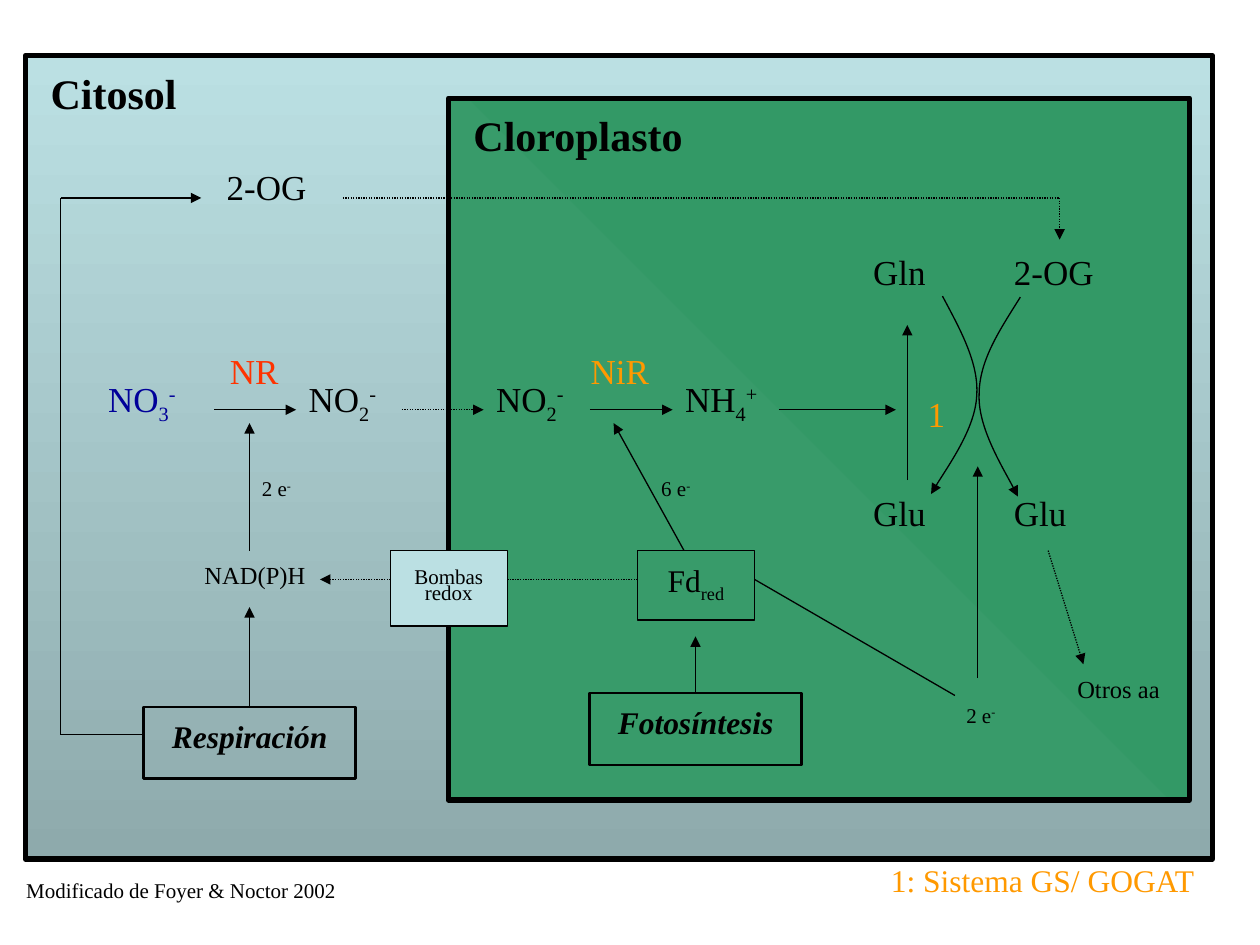
from lxml import etree
from pptx import Presentation
from pptx import util as u
from pptx.dml import color
from pptx.enum import dml, shapes, text
from pptx.oxml import ns

BLACK, ORANGE = "000000", "FF9900"
LEFT, CENTER = text.PP_ALIGN.LEFT, text.PP_ALIGN.CENTER
BASELINES = {"sub": "-25000", "sup": "30000"}


def rgb(value):
    return color.RGBColor.from_string(value)


def write(frame, paragraphs, size, align=LEFT, ink=BLACK, strong=False):
    """Fill a frame; each paragraph is a list of (text, position) runs."""
    frame.word_wrap = True
    frame.vertical_anchor = text.MSO_ANCHOR.TOP
    frame.margin_top = u.Cm(0.13 + 0.0045 * size)
    font_format = {"name": "Times New Roman", "size": u.Pt(size),
                   "bold": strong, "italic": False}
    for number, runs in enumerate(paragraphs):
        paragraph = frame.paragraphs[0] if number == 0 else frame.add_paragraph()
        paragraph.alignment = align
        for words, position in runs:
            run = paragraph.add_run()
            run.text = words
            for key, value in font_format.items():
                setattr(run.font, key, value)
            run.font.color.rgb = rgb(ink)
            if position:
                run.font._element.set("baseline", BASELINES[position])


deck = Presentation()
deck.slide_width, deck.slide_height = u.Cm(25.4), u.Cm(19.05)
slide = deck.slides.add_slide(deck.slide_layouts[6])
parts = slide.shapes

# Cell compartments: place, gradient colours, angle
compartments = [
    ((0.51, 1.12, 23.93, 16.2), ("BBE0E3", "8EAAAC"), 270),
    ((9.04, 1.98, 14.94, 14.15), ("389B6A", "339966"), 45),
]
for place, shades, angle in compartments:
    compartment = parts.add_shape(shapes.MSO_SHAPE.RECTANGLE, *map(u.Cm, place))
    compartment.shadow.inherit = False
    compartment.fill.gradient()
    compartment.fill.gradient_angle = angle
    for stop, shade, offset in zip(compartment.fill.gradient_stops, shades, (0, 1)):
        stop.color.rgb = rgb(shade)
        stop.position = offset
    compartment.line.color.rgb = rgb(BLACK)
    compartment.line.width = u.Pt(3)

# Framed sources of energy and reducing power
respiration = [[("Respiración", None)]]
photosynthesis = [[("Fotosíntesis", None)]]
ferredoxin = [[("Fd", None), ("red", "sub")]]
pumps = [[("Bombas", None)], [("redox", None)]]
sources = [
    ((2.9, 14.25, 4.27, 1.45), respiration, 18, 1.5, None),
    ((11.89, 13.97, 4.27, 1.45), photosynthesis, 18, 1.5, None),
    ((12.85, 11.1, 2.36, 1.4), ferredoxin, 18, 0.75, None),
    ((7.87, 11.1, 2.36, 1.52), pumps, 12, 0.75, "BBE0E3"),
]
for place, words, size, border, shade in sources:
    source = parts.add_shape(shapes.MSO_SHAPE.RECTANGLE, *map(u.Cm, place))
    source.shadow.inherit = False
    if shade:
        source.fill.solid()
        source.fill.fore_color.rgb = rgb(shade)
    else:
        source.fill.background()
    source.line.color.rgb = rgb(BLACK)
    source.line.width = u.Pt(border)
    write(source.text_frame, words, size, CENTER, strong=border > 1)
    if words is pumps:
        source.text_frame.margin_top = u.Cm(0.44)
        for line in source.text_frame.paragraphs:
            line.line_spacing = u.Pt(9.2)
    elif border > 1:
        source.text_frame.paragraphs[0].runs[0].font.italic = True

# Compounds and electrons: left, top, width, size, colour, runs
nitrite = [("NO", None), ("2", "sub"), ("-", "sup")]
nitrate = [("NO", None), ("3", "sub"), ("-", "sup")]
ammonium = [("NH", None), ("4", "sub"), ("+", "sup")]
two_electrons = [("2 e", None), ("-", "sup")]
six_electrons = [("6 e", None), ("-", "sup")]
glutamate, oxoglutarate = [("Glu", None)], [("2-OG", None)]
compounds = [
    (1.93, 7.39, 2.62, 20, "000099", nitrate),
    (5.97, 7.39, 2.62, 20, BLACK, nitrite),
    (9.75, 7.39, 2.62, 20, BLACK, nitrite),
    (13.56, 7.39, 2.62, 20, BLACK, ammonium),
    (4.32, 3.12, 2.62, 20, BLACK, oxoglutarate),
    (20.19, 4.83, 2.62, 20, BLACK, oxoglutarate),
    (17.35, 4.83, 2.62, 20, BLACK, [("Gln", None)]),
    (17.35, 9.68, 2.62, 20, BLACK, glutamate),
    (20.19, 9.68, 2.62, 20, BLACK, glutamate),
    (19.23, 13.97, 1.42, 12, BLACK, two_electrons),
    (5.03, 9.4, 1.42, 12, BLACK, two_electrons),
    (13.08, 9.4, 1.42, 12, BLACK, six_electrons),
    (0.28, 17.5, 7.59, 12, BLACK, [("Modificado de Foyer & Noctor 2002", None)]),
]
# Titles, enzymes and other centred labels
titles = [
    (0.51, 1.12, 3.56, 24, BLACK, "Citosol"),
    (8.81, 1.98, 5.69, 24, BLACK, "Cloroplasto"),
    (3.12, 11.1, 4.04, 14, BLACK, "NAD(P)H"),
    (4.06, 6.83, 2.13, 20, "FF3300", "NR"),
    (11.43, 6.83, 2.13, 20, ORANGE, "NiR"),
    (17.81, 7.7, 2.13, 20, ORANGE, "1"),
    (21.13, 13.39, 2.84, 14, BLACK, "Otros aa"),
    (16.64, 17.15, 8.76, 18, ORANGE, "1: Sistema GS/ GOGAT"),
]
labels = [(*compound, LEFT) for compound in compounds]
labels += [(*title[:5], [(title[5], None)], CENTER) for title in titles]
for left, top, width, size, ink, runs, align in labels:
    label = parts.add_textbox(u.Cm(left), u.Cm(top), u.Cm(width), u.Cm(0.07 * size))
    write(label.text_frame, [runs], size, align, ink, strong=size == 24)

# Straight flows: start, end, dotted, arrowhead
flows = [
    (4.32, 8.26, 5.97, 8.26, False, True),
    (8.1, 8.26, 9.75, 8.26, True, True),
    (11.89, 8.26, 13.56, 8.26, False, True),
    (15.7, 8.26, 18.06, 8.26, False, True),
    (5.03, 14.25, 5.03, 12.24, False, True),
    (5.03, 11.1, 5.03, 8.53, False, True),
    (18.29, 9.68, 18.29, 6.55, False, True),
    (2.9, 14.81, 1.22, 14.81, False, False),
    (1.22, 14.81, 1.22, 3.99, False, False),
    (1.22, 3.99, 4.06, 3.99, False, True),
    (6.91, 3.99, 21.36, 3.99, True, False),
    (21.36, 3.99, 21.36, 4.83, True, True),
    (14.02, 13.97, 14.02, 12.83, False, True),
    (12.85, 11.68, 10.24, 11.68, True, False),
    (7.87, 11.68, 6.45, 11.68, True, True),
    (13.79, 11.1, 12.37, 8.53, False, True),
    (15.21, 11.68, 19.25, 14.02, False, False),
    (19.71, 13.67, 19.71, 9.4, False, True),
    (21.13, 11.1, 21.84, 13.39, True, True),
]
strokes = []
for *ends, dotted, arrow in flows:
    flow = parts.add_connector(shapes.MSO_CONNECTOR.STRAIGHT, *map(u.Cm, ends))
    strokes.append((flow, dotted, arrow))

# Curved flows of the GS/GOGAT cycle: start, then two cubic segments
cycle = [
    [(19, 5.97), (19.35, 6.63), (19.74, 7.32), (19.69, 7.98),
     (19.66, 8.64), (18.95, 9.63), (18.77, 9.96)],
    [(20.57, 5.99), (20.17, 6.63), (19.74, 7.26), (19.74, 7.95),
     (19.71, 8.61), (20.35, 9.65), (20.52, 10.01)],
]
for points in cycle:
    start, *others = [(u.Cm(x), u.Cm(y)) for x, y in points]
    outline = parts.build_freeform(*start)
    outline.add_line_segments(others, close=False)
    curve = outline.convert_to_shape()
    curve.shadow.inherit = False
    curve.fill.background()
    route = curve._element.find(".//" + ns.qn("a:path"))
    steps = route.findall(ns.qn("a:lnTo"))
    for first in range(0, len(steps), 3):
        bend = etree.SubElement(route, ns.qn("a:cubicBezTo"))
        for step in steps[first:first + 3]:
            bend.append(step[0])
            route.remove(step)
    strokes.append((curve, False, True))

# Line style shared by every flow
for stroke, dotted, arrow in strokes:
    stroke.line.color.rgb = rgb(BLACK)
    stroke.line.width = u.Pt(0.75)
    if dotted:
        stroke.line.dash_style = dml.MSO_LINE.ROUND_DOT
    if arrow:
        etree.SubElement(stroke.line._get_or_add_ln(), ns.qn("a:tailEnd"), type="triangle")
    properties = stroke._element.spPr
    if properties.find(ns.qn("a:effectLst")) is None:
        etree.SubElement(properties, ns.qn("a:effectLst"))

deck.save("out.pptx")
